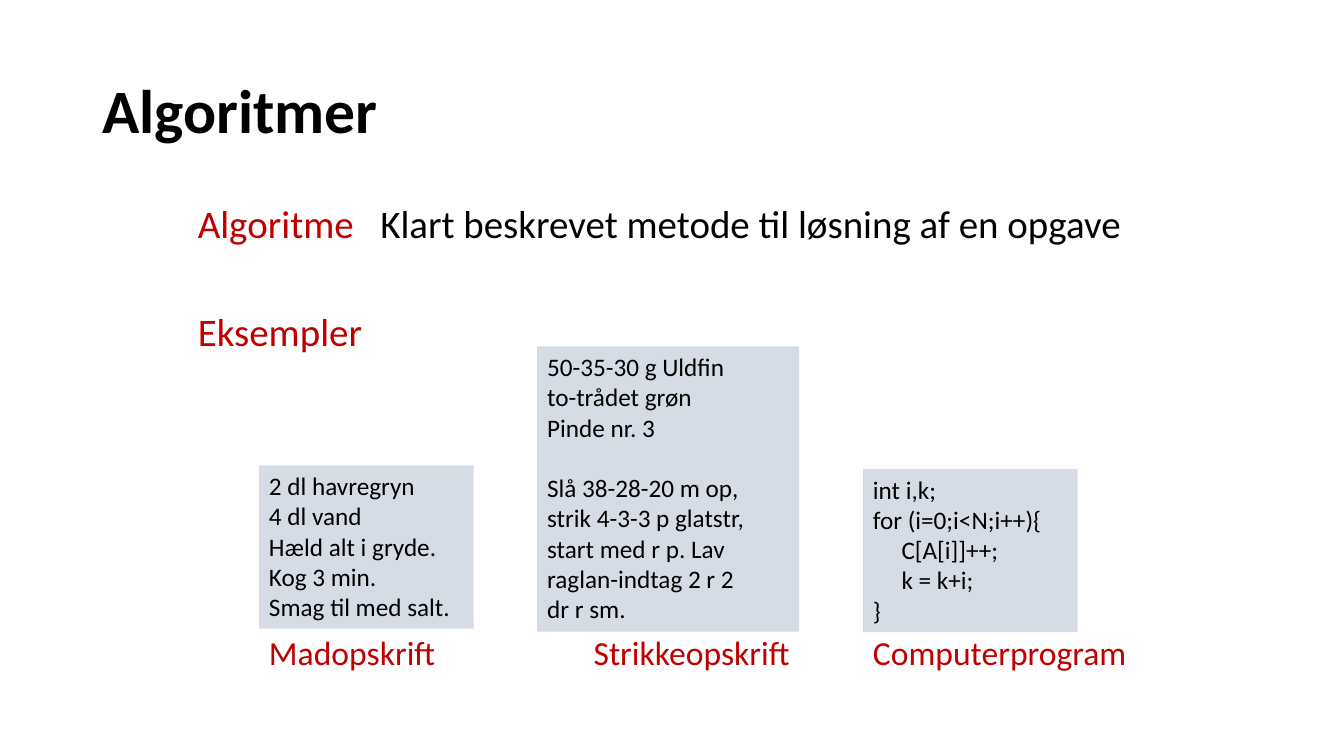
from lxml.etree import SubElement
from pptx import Presentation
from pptx.dml.color import RGBColor
from pptx.enum.shapes import MSO_SHAPE
from pptx.enum.text import MSO_ANCHOR, MSO_AUTO_SIZE, PP_ALIGN
from pptx.oxml.ns import qn
from pptx.util import Cm, Pt

BLACK = RGBColor(0x00, 0x00, 0x00)
RED = RGBColor(0xC0, 0x00, 0x00)
PALE_BLUE = RGBColor(0xD6, 0xDC, 0xE5)
FONT = "Calibri"

CARD_LINE = Pt(21.6)
CODE_INDENT = Cm(0.72)
TERM_WIDTH = Cm(4.6)
CAPTION_TOP = Cm(15.79)
CAPTION_WIDTH = Cm(7.2)
CAPTION_HEIGHT = Cm(1.3)

EXAMPLES = [
    ("Madopskrift", 6.53, (6.53, 11.73, 5.41, 4.11),
     ["2 dl havregryn", "4 dl vand", "Hæld alt i gryde.", "Kog 3 min.",
      "Smag til med salt."], (), ()),
    ("Strikkeopskrift", 14.71, (13.54, 8.73, 6.6, 7.19),
     ["50-35-30 g Uldfin", "to-trådet grøn", "Pinde nr. 3",
      "Slå 38-28-20 m op,", "strik 4-3-3 p glatstr,", "start med r p. Lav",
      "raglan-indtag 2 r 2", "dr r sm."], (3,), ()),
    ("Computerprogram", 21.75, (21.75, 11.82, 5.41, 4.11),
     ["int i,k;", "for (i=0;i<N;i++){", "C[A[i]]++;", "k = k+i;", "}"],
     (), (2, 3)),
]


def place(region, left, top, width, height):
    region.left, region.top = left, top
    region.width, region.height = width, height


def style(font, size, color, bold=False):
    font.name = FONT
    font.size = Pt(size)
    font.bold = bold
    font.color.rgb = color


def set_indent(paragraph, margin, first_line=0):
    properties = paragraph._p.get_or_add_pPr()
    properties.set("marL", str(int(margin)))
    properties.set("indent", str(int(first_line)))
    return properties


def add_heading(slide, left, top, width, height):
    heading = slide.shapes.title
    place(heading, left, top, width, height)
    frame = heading.text_frame
    frame.text = "Algoritmer"
    frame.vertical_anchor = MSO_ANCHOR.MIDDLE
    frame.auto_size = MSO_AUTO_SIZE.NONE
    paragraph = frame.paragraphs[0]
    paragraph.alignment = PP_ALIGN.LEFT
    paragraph.line_spacing = 0.9
    style(paragraph.font, 44, BLACK, bold=True)


def add_definition(slide, left, top, width, height):
    definition = slide.placeholders[1]
    place(definition, left, top, width, height)
    frame = definition.text_frame
    frame.text = "Algoritme\t\nEksempler"
    frame.auto_size = MSO_AUTO_SIZE.NONE
    for paragraph, space_before in zip(frame.paragraphs, (10, 47.5)):
        paragraph.line_spacing = 0.9
        paragraph.space_before = Pt(space_before)
        SubElement(set_indent(paragraph, TERM_WIDTH, -TERM_WIDTH),
                   qn("a:buNone"))
        style(paragraph.font, 27.8, RED)
    meaning = frame.paragraphs[0].add_run()
    meaning.text = "Klart beskrevet metode til løsning af en opgave"
    meaning.font.color.rgb = BLACK


def add_card(slide, left, top, width, height, lines, section_starts, indented):
    card = slide.shapes.add_shape(MSO_SHAPE.RECTANGLE, left, top, width, height)
    card.shadow.inherit = False
    card.fill.solid()
    card.fill.fore_color.rgb = PALE_BLUE
    card.line.fill.background()
    frame = card.text_frame
    frame.word_wrap = True
    frame.vertical_anchor = MSO_ANCHOR.TOP
    frame.text = "\n".join(lines)
    for number, paragraph in enumerate(frame.paragraphs):
        paragraph.alignment = PP_ALIGN.LEFT
        style(paragraph.font, 18, BLACK)
        if number in section_starts:
            paragraph.space_before = CARD_LINE
        if number in indented:
            set_indent(paragraph, CODE_INDENT)


def add_caption(slide, left, top, width, height, caption):
    label = slide.shapes.add_textbox(left, top, width, height)
    label.text_frame.word_wrap = True
    label.text_frame.text = caption
    style(label.text_frame.paragraphs[0].font, 24, RED)


def main():
    presentation = Presentation()
    presentation.slide_width = Cm(33.87)
    presentation.slide_height = Cm(19.05)
    slide = presentation.slides.add_slide(presentation.slide_layouts[1])
    add_heading(slide, Cm(2.33), Cm(1.01), Cm(29.21), Cm(3.68))
    add_definition(slide, Cm(4.73), Cm(5.03), Cm(24.4), Cm(4))
    for caption, caption_left, box, lines, section_starts, indented in EXAMPLES:
        add_card(slide, *map(Cm, box), lines, section_starts, indented)
        add_caption(slide, Cm(caption_left), CAPTION_TOP, CAPTION_WIDTH,
                    CAPTION_HEIGHT, caption)
    presentation.save("out.pptx")


if __name__ == "__main__":
    main()
